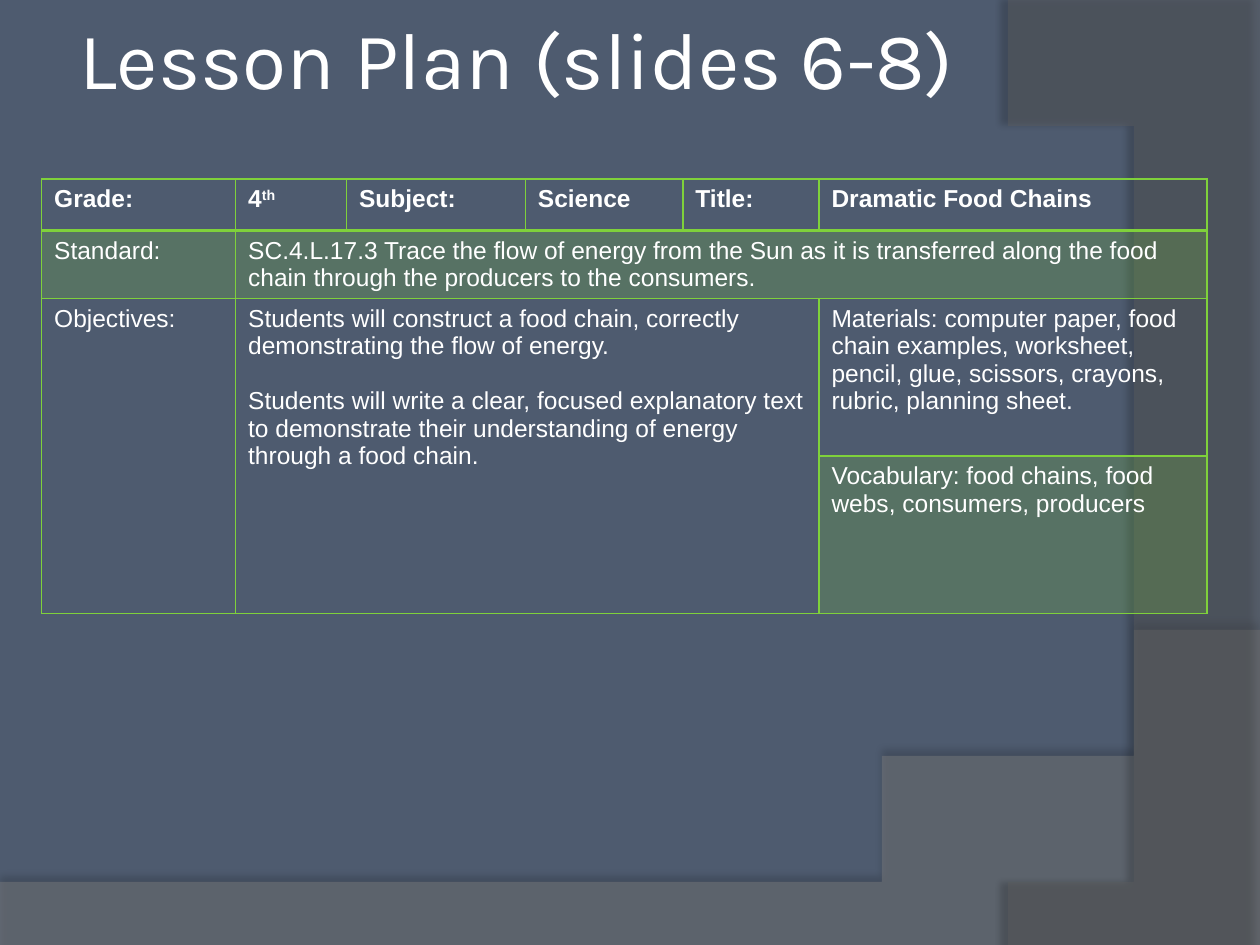
from dataclasses import dataclass

from lxml import etree
from pptx import Presentation
from pptx import util as u
from pptx.dml.color import RGBColor
from pptx.enum import text
from pptx.oxml import parse_xml
from pptx.oxml.ns import nsdecls, qn


@dataclass(frozen=True)
class Theme:
    background: str = "4E5B6F"
    ink: str = "FFFFFF"
    accent: str = "7FD13B"
    title_font: str = "Karla"
    body_font: str = "Arial"
    title_size: int = 46
    body_size: int = 14


THEME = Theme()
WIDTH, HEIGHT = 10, 7.5

# Content
TITLE = "Lesson Plan (slides 6-8)"
COLUMNS = [1.54, 0.88, 1.42, 1.25, 1.08, 3.08]
ROWS = [0.41, 0.54, 1.25, 1.25]
HEADER = ["Grade:", "4th", "Subject:", "Science", "Title:", "Dramatic Food Chains"]
# row, column, rows spanned, columns spanned, tinted, paragraphs
BODY = [
    (1, 0, 1, 1, True, ["Standard:"]),
    (1, 1, 1, 5, True, ["SC.4.L.17.3 Trace the flow of energy from the Sun as it is "
                        "transferred along the food chain through the producers to "
                        "the consumers."]),
    (2, 0, 2, 1, False, ["Objectives:"]),
    (2, 1, 2, 4, False, ["Students will construct a food chain, correctly "
                         "demonstrating the flow of energy.",
                         "Students will write a clear, focused explanatory text to "
                         "demonstrate their understanding of energy through a food "
                         "chain."]),
    (2, 5, 1, 1, False, ["Materials: computer paper, food chain examples, worksheet, "
                         "pencil, glue, scissors, crayons, rubric, planning sheet."]),
    (3, 5, 1, 1, True, ["Vocabulary: food chains, food webs, consumers, producers"]),
]
# Each swoosh: straight corners, then one Bezier curve (four control points)
SWOOSHES = [
    dict(corners=[(0, 7.51), (10, 7.51)],
         curve=[(10, 5.2), (5.59, 7.29), (3.91, 7.19), (0, 7.05)],
         color="7F7F7F", opacity=45, shade=35, distance=3.5, angle=270),
    dict(corners=[(10, 0.02), (10, 7.5)],
         curve=[(8.21, 7.5), (9.35, 6.19), (10.18, 3), (8, 0)],
         color="5E5E5E", opacity=40, shade=45, distance=4, angle=180),
]


def set_opacity(fill_parent, percent):
    color = fill_parent.find(qn("a:solidFill"))[0]
    etree.SubElement(color, qn("a:alpha")).set("val", str(percent * 1000))


def bezier(points, steps=60):
    for step in range(steps + 1):
        t = step / steps
        weights = ((1 - t) ** 3, 3 * t * (1 - t) ** 2, 3 * t * t * (1 - t), t ** 3)
        yield tuple(sum(w * p[axis] for w, p in zip(weights, points))
                    for axis in (0, 1))


def add_swoosh(page, corners, curve, color, opacity, shade, distance, angle):
    outline = corners + list(bezier(curve))
    builder = page.shapes.build_freeform(*outline[0], scale=u.Inches(1))
    builder.add_line_segments(outline[1:], close=True)
    shape = builder.convert_to_shape()
    shape.fill.solid()
    shape.fill.fore_color.rgb = RGBColor.from_string(color)
    shape.line.fill.background()
    shape.shadow.inherit = False
    properties = shape.element.spPr
    set_opacity(properties, opacity)
    properties.find(qn("a:effectLst")).append(parse_xml(
        f'<a:outerShdw {nsdecls("a")} blurRad="{u.Pt(4)}" dist="{u.Pt(distance)}" '
        f'dir="{angle * 60000}" algn="ctr" rotWithShape="0"><a:srgbClr val="000000">'
        f'<a:alpha val="{shade * 1000}"/></a:srgbClr></a:outerShdw>'))


def style_span(span, font, size, bold=False):
    span.font.name, span.font.size, span.font.bold = font, u.Pt(size), bold
    span.font.color.rgb = RGBColor.from_string(THEME.ink)


def style_cell(cell, header, tinted):
    if tinted:
        cell.fill.solid()
        cell.fill.fore_color.rgb = RGBColor.from_string(THEME.accent)
    else:
        cell.fill.background()
    properties = cell._tc.get_or_add_tcPr()
    if tinted:
        set_opacity(properties, 20)
    for index, side in enumerate("LRTB"):
        points = 2 if header and side == "B" else 1
        properties.insert(index, parse_xml(
            f'<a:ln{side} {nsdecls("a")} w="{u.Pt(points)}"><a:solidFill>'
            f'<a:srgbClr val="{THEME.accent}"/></a:solidFill></a:ln{side}>'))


def write_cell(cell, paragraphs, bold):
    frame = cell.text_frame
    frame.text = "\n".join(paragraphs)
    for index, para in enumerate(frame.paragraphs):
        if index:
            para.space_before = u.Pt(15.7)
        for span in para.runs:
            style_span(span, THEME.body_font, THEME.body_size, bold)


def add_plan(page):
    frame = page.shapes.add_table(len(ROWS), len(COLUMNS), u.Inches(0.33),
                                  u.Inches(1.42), u.Inches(sum(COLUMNS)),
                                  u.Inches(sum(ROWS)))
    table = frame.table
    table.horz_banding = table.first_row = False
    for column, width in zip(table.columns, COLUMNS):
        column.width = u.Inches(width)
    for row, height in zip(table.rows, ROWS):
        row.height = u.Inches(height)

    # Header row, with the ordinal ending raised
    for column, label in enumerate(HEADER):
        cell = table.cell(0, column)
        style_cell(cell, True, False)
        write_cell(cell, [label], True)
    para = table.cell(0, 1).text_frame.paragraphs[0]
    para.runs[0].text = "4"
    ending = para.add_run()
    ending.text = "th"
    style_span(ending, THEME.body_font, THEME.body_size, True)
    ending.font._element.set("baseline", "30000")

    # Body cells, merged where they span
    for top, left, down, across, tinted, paragraphs in BODY:
        for row in range(top, top + down):
            for column in range(left, left + across):
                style_cell(table.cell(row, column), False, tinted)
        cell = table.cell(top, left)
        if down * across > 1:
            cell.merge(table.cell(top + down - 1, left + across - 1))
        write_cell(cell, paragraphs, False)
    return frame


def place_title(page):
    title = page.shapes.title
    title.left, title.top = u.Inches(0.58), u.Inches(-0.17)
    title.width, title.height = u.Inches(8.17), u.Inches(1.25)
    frame = title.text_frame
    frame.text = TITLE
    frame.word_wrap = True
    frame.auto_size = text.MSO_AUTO_SIZE.NONE
    frame.vertical_anchor = text.MSO_ANCHOR.MIDDLE
    frame.margin_left = frame.margin_right = u.Inches(0.05)
    frame.margin_top = frame.margin_bottom = u.Inches(0.05)
    para = frame.paragraphs[0]
    para.alignment = text.PP_ALIGN.LEFT
    style_span(para.runs[0], THEME.title_font, THEME.title_size)
    return title


def main():
    deck = Presentation()
    deck.slide_width, deck.slide_height = u.Inches(WIDTH), u.Inches(HEIGHT)
    page = deck.slides.add_slide(deck.slide_layouts[5])
    page.background.fill.solid()
    page.background.fill.fore_color.rgb = RGBColor.from_string(THEME.background)
    for swoosh in SWOOSHES:
        add_swoosh(page, **swoosh)
    title = place_title(page)
    plan = add_plan(page)
    plan.element.addprevious(title.element)  # title sits above the swooshes
    deck.save("out.pptx")


if __name__ == "__main__":
    main()
